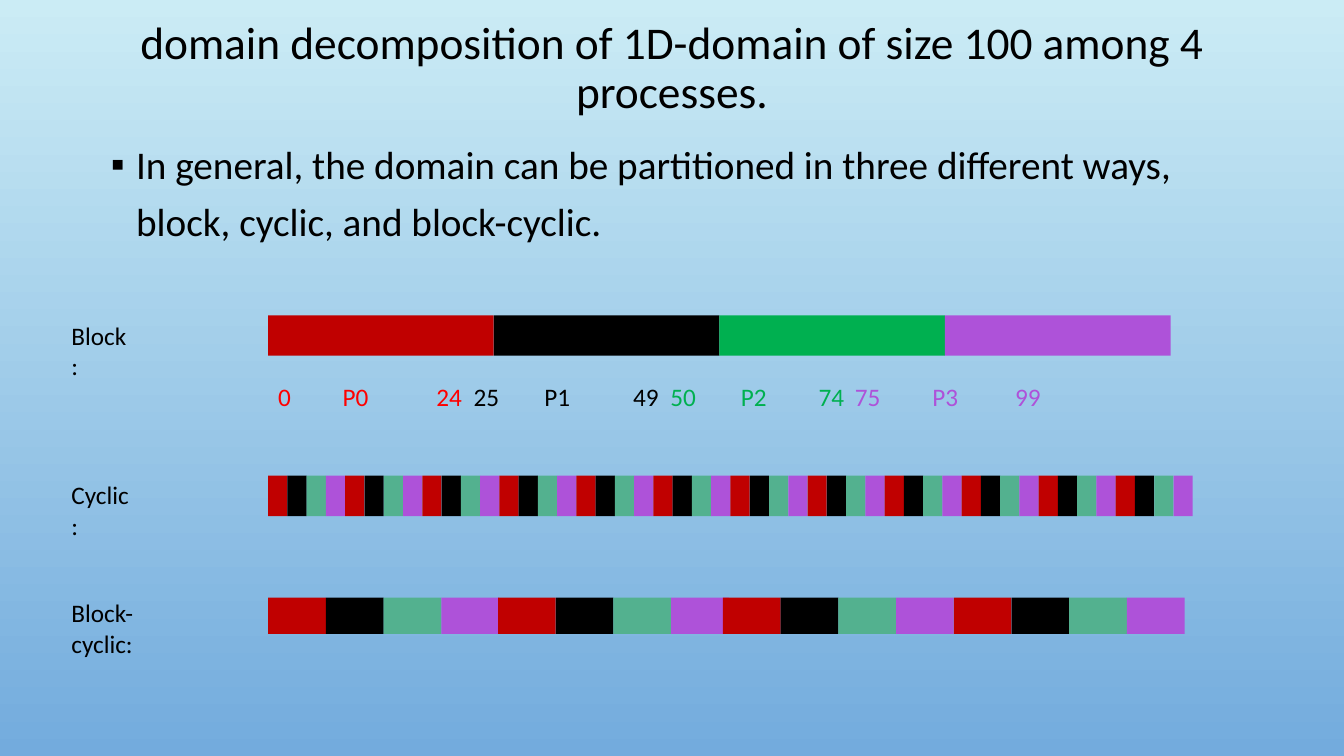
from lxml import etree
from pptx import Presentation
from pptx import util as u
from pptx.dml.color import RGBColor
from pptx.enum import shapes, text
from pptx.oxml import ns

BLACK = RGBColor(0x00, 0x00, 0x00)
DARK_RED = RGBColor(0xC0, 0x00, 0x00)
RED = RGBColor(0xFF, 0x00, 0x00)
GREEN = RGBColor(0x00, 0xB0, 0x50)
TEAL = RGBColor(0x53, 0xB1, 0x8F)
PURPLE = RGBColor(0xAE, 0x52, 0xD9)
SKY_TOP = RGBColor(0xCB, 0xEC, 0xF5)
SKY_BOTTOM = RGBColor(0x73, 0xAB, 0xDD)

BLOCK_COLORS = [DARK_RED, BLACK, GREEN, PURPLE]
CYCLE_COLORS = [DARK_RED, BLACK, TEAL, PURPLE]
BAR_LEFT = 2.66
LABEL_LEFT = 0.61

INDEX_RUNS = [
    ("0\tP0\t24\t", RED),
    ("25\tP1\t49\t", BLACK),
    ("50\tP2\t74\t", GREEN),
    ("75\tP3\t99", PURPLE),
]
INDEX_TABS = [0.64, 1.57, 1.94, 2.64, 3.52, 3.89, 4.59, 5.36, 5.72, 6.49, 7.31]


def add_run(p, words, *, size=18, color=BLACK, font="Calibri"):
    r = p.add_run()
    r.text = words
    r.font.name = font
    r.font.size = u.Pt(size)
    r.font.color.rgb = color


def place(sp, left, top, width, height):
    sp.left, sp.top = u.Inches(left), u.Inches(top)
    sp.width, sp.height = u.Inches(width), u.Inches(height)


class DomainSlide:
    """Holds the current slide and draws its elements in one style."""

    def __init__(self, prs):
        self.s = prs.slides.add_slide(prs.slide_layouts[1])
        fill = self.s.background.fill
        fill.gradient()
        fill.gradient_angle = 270
        for stop, color in zip(fill.gradient_stops, (SKY_TOP, SKY_BOTTOM)):
            stop.color.rgb = color

    def title(self, words):
        sp = self.s.shapes.title
        place(sp, 1, 0.32, 11.33, 1.23)
        tf = sp.text_frame
        tf.auto_size = text.MSO_AUTO_SIZE.NONE
        tf.vertical_anchor = text.MSO_ANCHOR.MIDDLE
        tf.margin_bottom = u.Inches(0.54)
        p = tf.paragraphs[0]
        p.alignment = text.PP_ALIGN.CENTER
        p.line_spacing = 0.9
        add_run(p, words, size=32.4)

    def bullet(self, words):
        sp = self.s.placeholders[1]
        place(sp, 1, 1.25, 11.33, 1.48)
        tf = sp.text_frame
        tf.auto_size = text.MSO_AUTO_SIZE.NONE
        p = tf.paragraphs[0]
        p.line_spacing = 1.2
        p.space_before = u.Pt(0)
        pPr = p._p.get_or_add_pPr()
        pPr.set("marL", str(u.Inches(0.25)))
        pPr.set("indent", str(-u.Inches(0.25)))
        bu_color = etree.SubElement(pPr, ns.qn("a:buClr"))
        etree.SubElement(bu_color, ns.qn("a:srgbClr"), val=str(BLACK))
        etree.SubElement(pPr, ns.qn("a:buFont"), typeface="Arial")
        etree.SubElement(pPr, ns.qn("a:buChar"), char="▪")
        add_run(p, words, size=28)

    def text_box(self, left, top, width, runs, tabs=()):
        """Add one paragraph of (words, color) runs with tab stops in inches."""
        sp = self.s.shapes.add_textbox(
            u.Inches(left), u.Inches(top), u.Inches(width), u.Inches(0.4))
        tf = sp.text_frame
        tf.word_wrap = True
        p = tf.paragraphs[0]
        if tabs:
            tab_list = etree.SubElement(p._p.get_or_add_pPr(), ns.qn("a:tabLst"))
            for tab in tabs:
                etree.SubElement(tab_list, ns.qn("a:tab"),
                                 pos=str(u.Inches(tab)), algn="l")
        for words, color in runs:
            add_run(p, words, color=color)

    def label(self, words, top, width):
        self.text_box(LABEL_LEFT, top, width, [(words, BLACK)])

    def bar(self, left, top, width, height, colors):
        """Split a bar into equal pieces, one for each color."""
        piece = width / len(colors)
        for i, color in enumerate(colors):
            sp = self.s.shapes.add_shape(
                shapes.MSO_SHAPE.RECTANGLE, u.Inches(left + i * piece),
                u.Inches(top), u.Inches(piece), u.Inches(height))
            sp.shadow.inherit = False
            sp.fill.solid()
            sp.fill.fore_color.rgb = color
            sp.line.fill.background()


def main():
    prs = Presentation()
    prs.slide_width, prs.slide_height = u.Inches(13.33), u.Inches(7.5)
    slide = DomainSlide(prs)
    slide.title("domain decomposition of 1D-domain of size 100 among 4 processes.")
    slide.bullet("In general, the domain can be partitioned in three different "
                 "ways, block, cyclic, and block-cyclic.")

    slide.bar(BAR_LEFT, 3.13, 8.95, 0.4, BLOCK_COLORS)
    slide.label("Block:", 3.13, 0.78)
    slide.text_box(BAR_LEFT, 3.73, 9.09, INDEX_RUNS, INDEX_TABS)

    slide.label("Cyclic:", 4.71, 0.83)
    slide.bar(BAR_LEFT, 4.72, 9.17, 0.4, CYCLE_COLORS * 12)

    slide.label("Block-cyclic:", 5.88, 1.39)
    for left in (BAR_LEFT, 4.94, 7.17, 9.46):
        slide.bar(left, 5.93, 2.29, 0.36, CYCLE_COLORS)

    prs.save("out.pptx")


if __name__ == "__main__":
    main()
